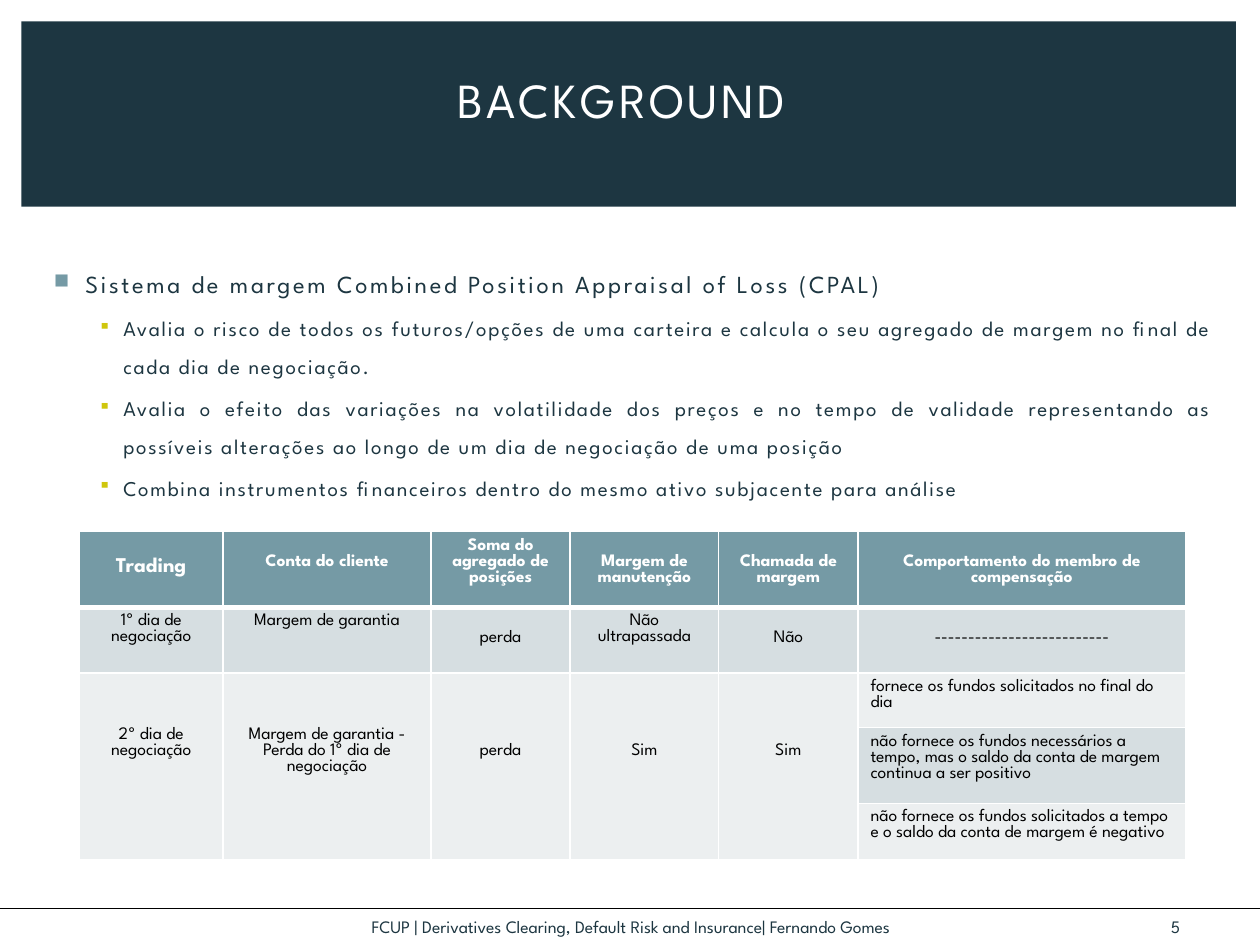
import dataclasses
import typing

import pptx
import pptx.dml.color
import pptx.enum.shapes
import pptx.enum.text
import pptx.oxml.ns
import pptx.util
from lxml import etree

ALIGN = pptx.enum.text.PP_ALIGN
ANCHOR = pptx.enum.text.MSO_ANCHOR


@dataclasses.dataclass(frozen=True)
class Theme:
    font: str = "League Spartan"
    navy: str = "1D3641"
    teal: str = "759AA5"
    lime: str = "CFC60D"
    white: str = "FFFFFF"
    black: str = "000000"
    band_dark: str = "D6DEE1"
    band_light: str = "ECEFF0"
    title: int = 28
    lead: int = 14
    detail: int = 12
    small: int = 10


class Area(typing.NamedTuple):
    """Left, top, width and height in cells of a 100 x 75 grid."""
    left: float
    top: float
    width: float
    height: float


class Bullet(typing.NamedTuple):
    text: str
    size: int
    tracking: float
    indent: float
    hang: float
    mark: str
    mark_color: str


class Entry(typing.NamedTuple):
    """A table cell; drop is the number of text lines it is lowered by."""
    text: str
    drop: int = 0
    rows: int = 1


THEME = Theme()
COLUMNS, ROWS = 100, 75
SLIDE_WIDTH, SLIDE_HEIGHT = pptx.util.Inches(10), pptx.util.Inches(7.5)
LINE_HEIGHT = 0.92  # of the type size
MARK_PERCENT = 85  # of the type size

BAND = Area(1.7, 1.7, 96.4, 14.7)
TITLE = Area(3.5, 2.1, 91.7, 11.5)
BODY = Area(2.8, 17.8, 94.5, 29.1)
TABLE = Area(6.3, 42.2, 87.8, 23.6)
FOOTER = Area(9.1, 71.8, 81.9, 3.5)
NUMBER = Area(90.1, 72, 6.4, 3)
RULE_ROW = 72.1

LEAD = ("Sistema de margem Combined Position Appraisal of Loss (CPAL)",)
DETAILS = (
    "Avalia o risco de todos os futuros/opções de uma carteira e calcula o seu "
    "agregado de margem no final de cada dia de negociação.",
    "Avalia o efeito das variações na volatilidade dos preços e no tempo de validade "
    "representando as possíveis alterações ao longo de um dia de negociação de uma posição",
    "Combina instrumentos financeiros dentro do mesmo ativo subjacente para análise",
)
BULLETS = [Bullet(text, THEME.lead, 1.5, 0.3, 0.25, "■", THEME.teal) for text in LEAD] + [
    Bullet(text, THEME.detail, 1, 0.6, 0.2, "▪", THEME.lime) for text in DETAILS]

COLUMN_WIDTHS = (11.4, 16.5, 11.05, 11.8, 11.05, 26)
ROW_HEIGHTS = (5.5, 5.2, 3.6, 4.8, 4.5)
ROW_FILLS = (THEME.teal, THEME.band_dark, THEME.band_light, THEME.band_dark, THEME.band_light)
ENTRIES = (
    (Entry("Trading", 1), Entry("Conta do cliente", 1), Entry("Soma do agregado de posições"),
     Entry("Margem de manutenção", 1), Entry("Chamada de margem", 1),
     Entry("Comportamento do membro de compensação", 1)),
    (Entry("1º dia de negociação"), Entry("Margem de garantia"), Entry("perda", 1),
     Entry("Não ultrapassada"), Entry("Não", 1), Entry("-" * 26, 1)),
    (Entry("2º dia de negociação", 3, 3),
     Entry("Margem de garantia - Perda do 1º dia de negociação", 3, 3),
     Entry("perda", 4, 3), Entry("Sim", 4, 3), Entry("Sim", 4, 3),
     Entry("fornece os fundos solicitados no final do dia")),
    (None,) * 5 + (Entry("não fornece os fundos necessários a tempo, mas o saldo da conta "
                         "de margem continua a ser positivo"),),
    (None,) * 5 + (Entry("não fornece os fundos solicitados a tempo e o saldo da conta "
                         "de margem é negativo"),),
)


def across(columns: float) -> int:
    return round(SLIDE_WIDTH * columns / COLUMNS)


def down(rows: float) -> int:
    return round(SLIDE_HEIGHT * rows / ROWS)


def place(area: Area) -> tuple:
    return across(area.left), down(area.top), across(area.width), down(area.height)


def rgb(color: str):
    return pptx.dml.color.RGBColor.from_string(color)


def add_element(parent, tag: str, **attributes: str):
    return etree.SubElement(parent, pptx.oxml.ns.qn(tag), attributes)


def write(para, text: str, *, size: float, color: str, bold: bool = False,
          align=ALIGN.CENTER, tracking: float = 0) -> None:
    para.alignment = align
    span = para.add_run()
    span.text = text
    span.font.name = THEME.font
    span.font.size = pptx.util.Pt(size)
    span.font.bold = bold
    span.font.color.rgb = rgb(color)
    if tracking:
        span.font._element.set("spc", str(round(tracking * 100)))


def add_box(slide, area: Area, anchor=ANCHOR.MIDDLE):
    frame = slide.shapes.add_textbox(*place(area)).text_frame
    frame.word_wrap = True
    frame.vertical_anchor = anchor
    return frame


def add_bullets(slide, area: Area, bullets: list) -> None:
    frame = add_box(slide, area, ANCHOR.TOP)
    frame.margin_top = pptx.util.Inches(0.24)
    for index, bullet in enumerate(bullets):
        para = frame.add_paragraph() if index else frame.paragraphs[0]
        write(para, bullet.text, size=bullet.size, color=THEME.navy,
              align=ALIGN.JUSTIFY, tracking=bullet.tracking)
        para.line_spacing = 1.5
        para.space_before = pptx.util.Pt(bullet.size * 0.2)
        layout = para._p.get_or_add_pPr()
        layout.set("marL", str(pptx.util.Inches(bullet.indent)))
        layout.set("indent", str(-pptx.util.Inches(bullet.hang)))
        add_element(add_element(layout, "a:buClr"), "a:srgbClr", val=bullet.mark_color)
        add_element(layout, "a:buSzPct", val=str(MARK_PERCENT * 1000))
        add_element(layout, "a:buChar", char=bullet.mark)


def add_borders(cell, header: bool, below_header: bool) -> None:
    layout = cell._tc.get_or_add_tcPr()
    widths = {"L": 1, "R": 1, "T": 3 if below_header else 1, "B": 3 if header else 1}
    for side, width in widths.items():
        line = add_element(layout, f"a:ln{side}", w=str(pptx.util.Pt(width)))
        add_element(add_element(line, "a:solidFill"), "a:srgbClr", val=THEME.white)


def add_margin_table(slide) -> None:
    table = slide.shapes.add_table(len(ROW_HEIGHTS), len(COLUMN_WIDTHS), *place(TABLE)).table
    table.first_row = table.horz_banding = False
    for column, width in zip(table.columns, COLUMN_WIDTHS):
        column.width = across(width)
    for row, height in zip(table.rows, ROW_HEIGHTS):
        row.height = down(height)
    for r, entries in enumerate(ENTRIES):
        for c, entry in enumerate(entries):
            cell = table.cell(r, c)
            add_borders(cell, r == 0, r == 1)
            cell.fill.solid()
            cell.fill.fore_color.rgb = rgb(ROW_FILLS[r])
            if entry is None:
                continue
            if entry.rows > 1:
                cell.merge(table.cell(r + entry.rows - 1, c))
            header = r == 0
            size = THEME.detail if header and c == 0 else THEME.small
            listed = r > 1 and c == len(entries) - 1
            cell.margin_top = pptx.util.Inches(0.05) + pptx.util.Pt(entry.drop * size * LINE_HEIGHT)
            write(cell.text_frame.paragraphs[0], entry.text, size=size, bold=header,
                  color=THEME.white if header else THEME.black,
                  align=ALIGN.LEFT if listed else ALIGN.CENTER)


def main() -> None:
    deck = pptx.Presentation()
    deck.slide_width, deck.slide_height = SLIDE_WIDTH, SLIDE_HEIGHT
    slide = deck.slides.add_slide(deck.slide_layouts[6])

    # Title band and footer rule
    band = slide.shapes.add_shape(pptx.enum.shapes.MSO_SHAPE.RECTANGLE, *place(BAND))
    band.shadow.inherit = False
    band.fill.solid()
    band.fill.fore_color.rgb = rgb(THEME.navy)
    band.line.fill.background()
    rule = slide.shapes.add_connector(pptx.enum.shapes.MSO_CONNECTOR.STRAIGHT,
                                      0, down(RULE_ROW), across(COLUMNS), down(RULE_ROW))
    rule.line.color.rgb = rgb(THEME.black)
    rule.line.width = pptx.util.Pt(0.75)
    add_element(rule._element.spPr, "a:effectLst")

    # Bullets, footer and title
    add_bullets(slide, BODY, BULLETS)
    for area, text in ((FOOTER, "FCUP | Derivatives Clearing, Default Risk and Insurance| "
                                "Fernando Gomes"), (NUMBER, "5")):
        write(add_box(slide, area).paragraphs[0], text, size=THEME.small, color=THEME.navy)
    write(add_box(slide, TITLE).paragraphs[0], "BACKGROUND",
          size=THEME.title, color=THEME.white, tracking=2)

    # Margin table
    add_margin_table(slide)
    deck.save("out.pptx")


if __name__ == "__main__":
    main()
